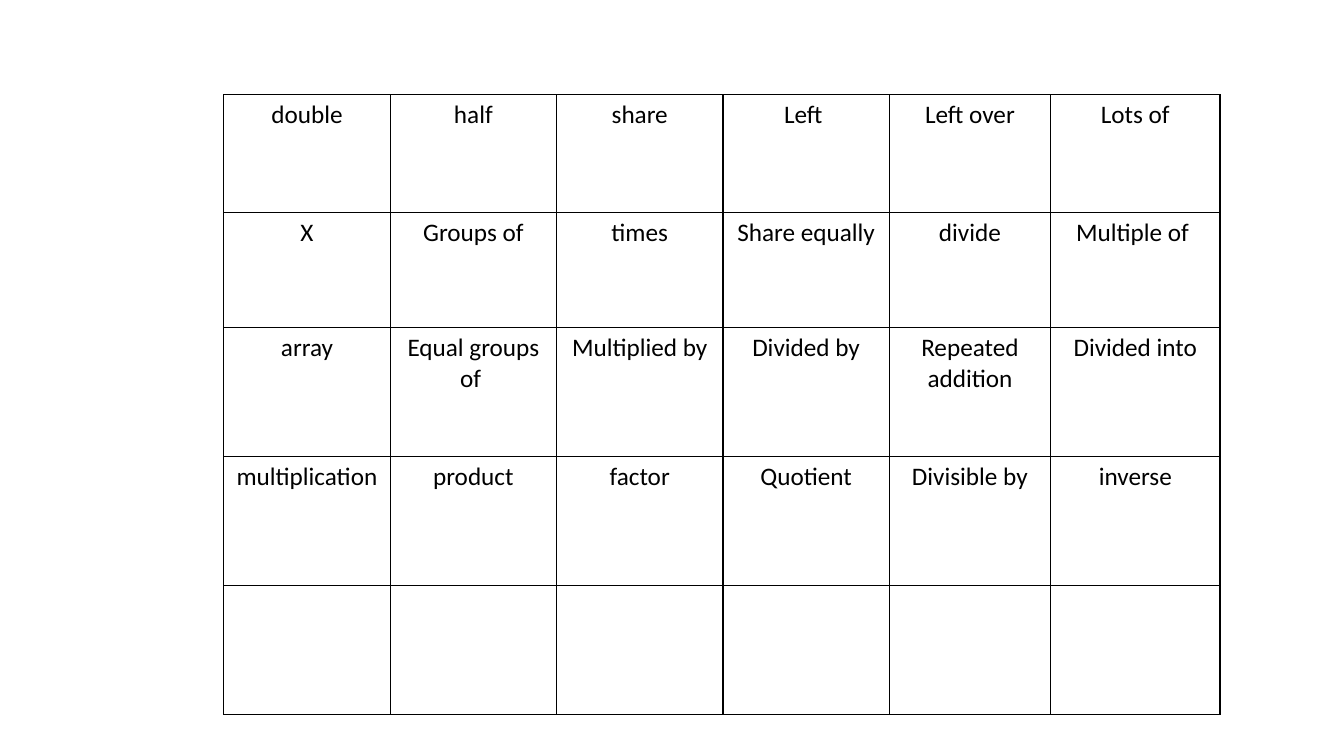
from dataclasses import dataclass

from lxml.etree import SubElement
from pptx import Presentation
from pptx.dml.color import RGBColor
from pptx.enum.text import PP_ALIGN
from pptx.oxml.ns import qn
from pptx.table import Table, _Cell
from pptx.util import Inches, Pt

COLORS = {"ink": "000000", "paper": "FFFFFF"}


@dataclass
class Row:
    height: float
    words: tuple[str, ...]


WIDTHS = (1.65, 1.65, 1.65, 1.65, 1.6, 1.68)
ROWS = (
    Row(1.17, ("double", "half", "share", "Left ", "Left over", "Lots of")),
    Row(1.14, ("X", "Groups of", "times", "Share equally", "divide", "Multiple of ")),
    Row(1.28, ("array", "Equal groups of ", "Multiplied by", "Divided by",
               "Repeated addition", "Divided into")),
    Row(1.28, ("multiplication", "product", "factor", "Quotient", "Divisible by", "inverse")),
    Row(1.28, ("",) * len(WIDTHS)),
)


def write(cell: _Cell, text: str, *, size: float = 18, font: str = "Calibri",
          color: str = "ink", align: PP_ALIGN = PP_ALIGN.CENTER) -> None:
    para = cell.text_frame.paragraphs[0]
    para.alignment = align
    para.font.size = Pt(size)
    if text:
        run = para.add_run()
        run.text = text
        run.font.size = Pt(size)
        run.font.name = font
        run.font.color.rgb = RGBColor.from_string(COLORS[color])


def border(cell: _Cell, width: float = 1, color: str = "ink") -> None:
    props = cell._tc.get_or_add_tcPr()
    for side in ("lnL", "lnR", "lnT", "lnB"):
        line = SubElement(props, qn(f"a:{side}"), w=str(Pt(width)))
        fill = SubElement(line, qn("a:solidFill"))
        SubElement(fill, qn("a:srgbClr"), val=COLORS[color])


def shade(cell: _Cell, color: str = "paper") -> None:
    cell.fill.solid()
    cell.fill.fore_color.rgb = RGBColor.from_string(COLORS[color])


def populate(table: Table) -> None:
    table.first_row = False
    table.horz_banding = False
    for column, width in zip(table.columns, WIDTHS):
        column.width = Inches(width)
    for line, row in zip(table.rows, ROWS):
        line.height = Inches(row.height)
        for cell, word in zip(line.cells, row.words):
            border(cell)
            shade(cell)
            write(cell, word)


def main() -> None:
    deck = Presentation()
    deck.slide_width = Inches(13.33)
    deck.slide_height = Inches(7.5)
    slide = deck.slides.add_slide(deck.slide_layouts[6])
    frame = slide.shapes.add_table(
        len(ROWS), len(WIDTHS), Inches(2.22), Inches(0.94),
        Inches(sum(WIDTHS)), Inches(sum(row.height for row in ROWS)))
    populate(frame.table)
    deck.save("out.pptx")


if __name__ == "__main__":
    main()
